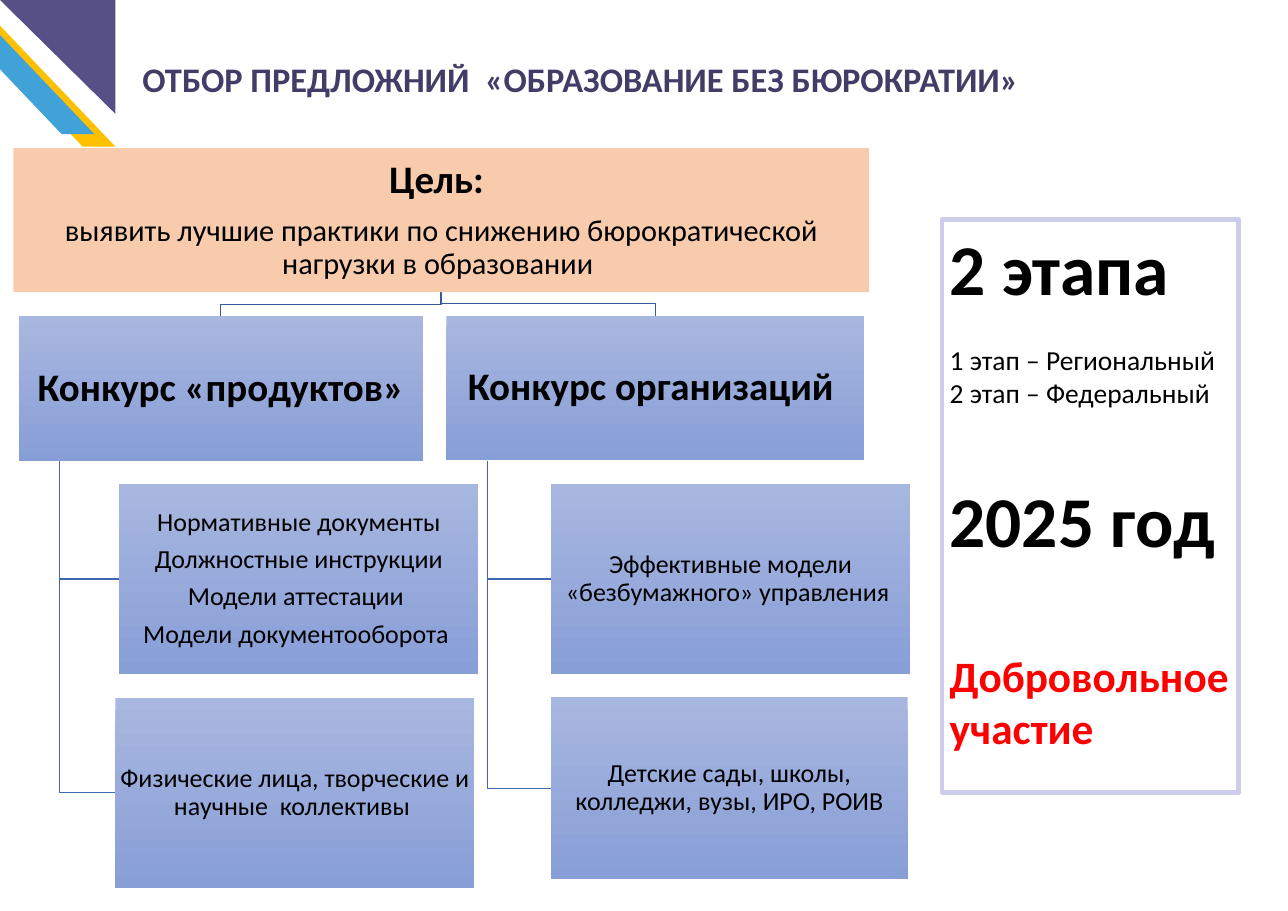
import pptx
import pptx.util
import pptx.dml.color
import pptx.enum.shapes
import pptx.enum.text
from dataclasses import dataclass
from typing import Any

Inches = pptx.util.Inches
Pt = pptx.util.Pt
RGBColor = pptx.dml.color.RGBColor
Shape = pptx.enum.shapes.MSO_SHAPE
Align = pptx.enum.text.PP_ALIGN
Anchor = pptx.enum.text.MSO_ANCHOR

FONT = "Calibri"
BLACK = RGBColor(0x00, 0x00, 0x00)
RED = RGBColor(0xFF, 0x00, 0x00)
YELLOW = RGBColor(0xFF, 0xC0, 0x00)
BLUE = RGBColor(0x41, 0xA2, 0xD8)
PURPLE = RGBColor(0x56, 0x50, 0x87)
TITLE = RGBColor(0x42, 0x3D, 0x67)
PEACH = RGBColor(0xF8, 0xCB, 0xAD)
LIGHT = RGBColor(0xA8, 0xB7, 0xDF)
DEEP = RGBColor(0x88, 0x9E, 0xD7)
TOP_LINE = RGBColor(0x36, 0x5B, 0x9D)
SUB_LINE = RGBColor(0x3E, 0x67, 0xB2)
FRAME = RGBColor(0xCD, 0xCD, 0xEB)

Point = tuple[float, float]
Box = tuple[float, float, float, float]


@dataclass
class Line:
    text: str
    size: float
    bold: bool = False
    color: RGBColor = BLACK
    before: float = 0


@dataclass
class Card:
    box: Box
    lines: list[Line]
    fill: RGBColor | None = None  # None means the blue gradient
    inset: float = 0.02


@dataclass
class Link:
    points: list[Point]
    color: RGBColor


def write(frame: Any, lines: list[Line], card: bool = False) -> None:
    for i, line in enumerate(lines):
        para = frame.paragraphs[0] if i == 0 else frame.add_paragraph()
        para.alignment = Align.CENTER if card else Align.LEFT
        if card:
            para.line_spacing = 0.9
            para.space_after = Pt(0.35 * line.size)
        if line.before:
            para.space_before = Pt(line.before)
        run = para.add_run()
        run.text = line.text
        run.font.name = FONT
        run.font.size = Pt(line.size)
        run.font.bold = line.bold
        run.font.color.rgb = line.color


def add_box(slide: Any, kind: Any, box: Box) -> Any:
    shape = slide.shapes.add_shape(kind, *map(Inches, box))
    shape.shadow.inherit = False
    shape.line.fill.background()
    return shape


def add_path(slide: Any, points: list[Point], close: bool) -> Any:
    spots = [(Inches(x), Inches(y)) for x, y in points]
    path = slide.shapes.build_freeform(*spots[0])
    path.add_line_segments(spots[1:], close=close)
    shape = path.convert_to_shape()
    shape.shadow.inherit = False
    return shape


def add_band(slide: Any, points: list[Point], color: RGBColor) -> None:
    band = add_path(slide, points, True)
    band.fill.solid()
    band.fill.fore_color.rgb = color
    band.line.fill.background()


def add_link(slide: Any, link: Link) -> None:
    shape = add_path(slide, link.points, False)
    shape.fill.background()
    shape.line.color.rgb = link.color
    shape.line.width = Pt(1)


def add_card(slide: Any, card: Card) -> None:
    shape = add_box(slide, Shape.RECTANGLE, card.box)
    if card.fill is None:
        shape.fill.gradient()
        shape.fill.gradient_angle = 270
        for stop, color in zip(shape.fill.gradient_stops, (LIGHT, DEEP)):
            stop.color.rgb = color
    else:
        shape.fill.solid()
        shape.fill.fore_color.rgb = card.fill
    frame = shape.text_frame
    frame.word_wrap = True
    frame.vertical_anchor = Anchor.MIDDLE
    frame.margin_left = frame.margin_right = Inches(card.inset)
    frame.margin_top = frame.margin_bottom = Inches(card.inset)
    write(frame, card.lines, card=True)


LINKS = [
    # Goal to the two contests
    Link([(5.66, 3.75), (5.66, 3.9), (8.41, 3.9), (8.41, 4.05)], TOP_LINE),
    Link([(5.66, 3.75), (5.66, 3.91), (2.83, 3.91), (2.83, 4.06)], TOP_LINE),
] + [
    # Each contest to its details
    Link([(x, 5.91), (x, y), (end, y)], SUB_LINE)
    for x, y, end in [(6.26, 10.12, 7.07), (6.26, 7.43, 7.07),
                      (0.76, 10.17, 1.48), (0.76, 7.43, 1.53)]
]

CARDS = [
    Card((0.17, 1.9, 10.98, 1.85), [
        Line("Цель: ", 36, True),
        Line("выявить лучшие практики по снижению бюрократической "
             "нагрузки в образовании ", 28)], PEACH, 0.03),
    Card((0.24, 4.06, 5.19, 1.85),
         [Line("Конкурс «продуктов»", 36, True)], inset=0.03),
    Card((5.73, 4.05, 5.36, 1.85),
         [Line("Конкурс организаций ", 36, True)], inset=0.03),
    Card((1.53, 6.21, 4.61, 2.44), [
        Line(text, 24) for text in (
            "Нормативные документы", "Должностные инструкции",
            "Модели аттестации ", "Модели документооборота ")]),
    Card((1.48, 8.96, 4.61, 2.44), [
        Line("Физические лица, творческие и научные  коллективы ", 24)]),
    Card((7.07, 6.21, 4.61, 2.44), [
        Line("Эффективные модели «безбумажного» управления ", 24)]),
    Card((7.07, 8.95, 4.58, 2.33), [
        Line("Детские сады, школы, колледжи, вузы, ИРО, РОИВ", 24)]),
]

STAGES = [
    Line("2 этапа", 66, True),
    Line("1 этап – Региональный", 25.4, before=31),
    Line("2 этап – Федеральный", 25.4),
    Line("2025 год", 66, True, before=62),
    Line("Добровольное", 40, True, RED, before=80.5),
    Line("участие", 40, True, RED),
]


def main() -> None:
    deck = pptx.Presentation()
    deck.slide_width = Inches(16.53)
    deck.slide_height = Inches(11.69)
    slide = deck.slides.add_slide(deck.slide_layouts[6])

    # Corner ornament
    add_band(slide, [(0, 0.33), (1.48, 1.88), (1.06, 1.88), (0, 0.77)], YELLOW)
    add_band(slide, [(0, 0.45), (1.21, 1.72), (0.79, 1.72), (0, 0.89)], BLUE)
    corner = add_box(slide, Shape.RIGHT_TRIANGLE, (0, 0, 1.48, 1.46))
    corner.rotation = 180
    corner.fill.solid()
    corner.fill.fore_color.rgb = PURPLE

    # Title
    title = slide.shapes.add_textbox(*map(Inches, (1.73, 0.69, 12.67, 0.64)))
    title.text_frame.word_wrap = True
    write(title.text_frame, [
        Line("ОТБОР ПРЕДЛОЖНИЙ  «ОБРАЗОВАНИЕ БЕЗ БЮРОКРАТИИ»", 31.8, True, TITLE)])

    # Goal tree
    for link in LINKS:
        add_link(slide, link)
    for card in CARDS:
        add_card(slide, card)

    # Stages panel
    panel = add_box(slide, Shape.RECTANGLE, (12.09, 2.82, 3.81, 7.35))
    panel.fill.background()
    panel.line.color.rgb = FRAME
    panel.line.width = Pt(4.5)
    panel.text_frame.word_wrap = False
    panel.text_frame.vertical_anchor = Anchor.TOP
    write(panel.text_frame, STAGES)

    deck.save("out.pptx")


if __name__ == "__main__":
    main()
